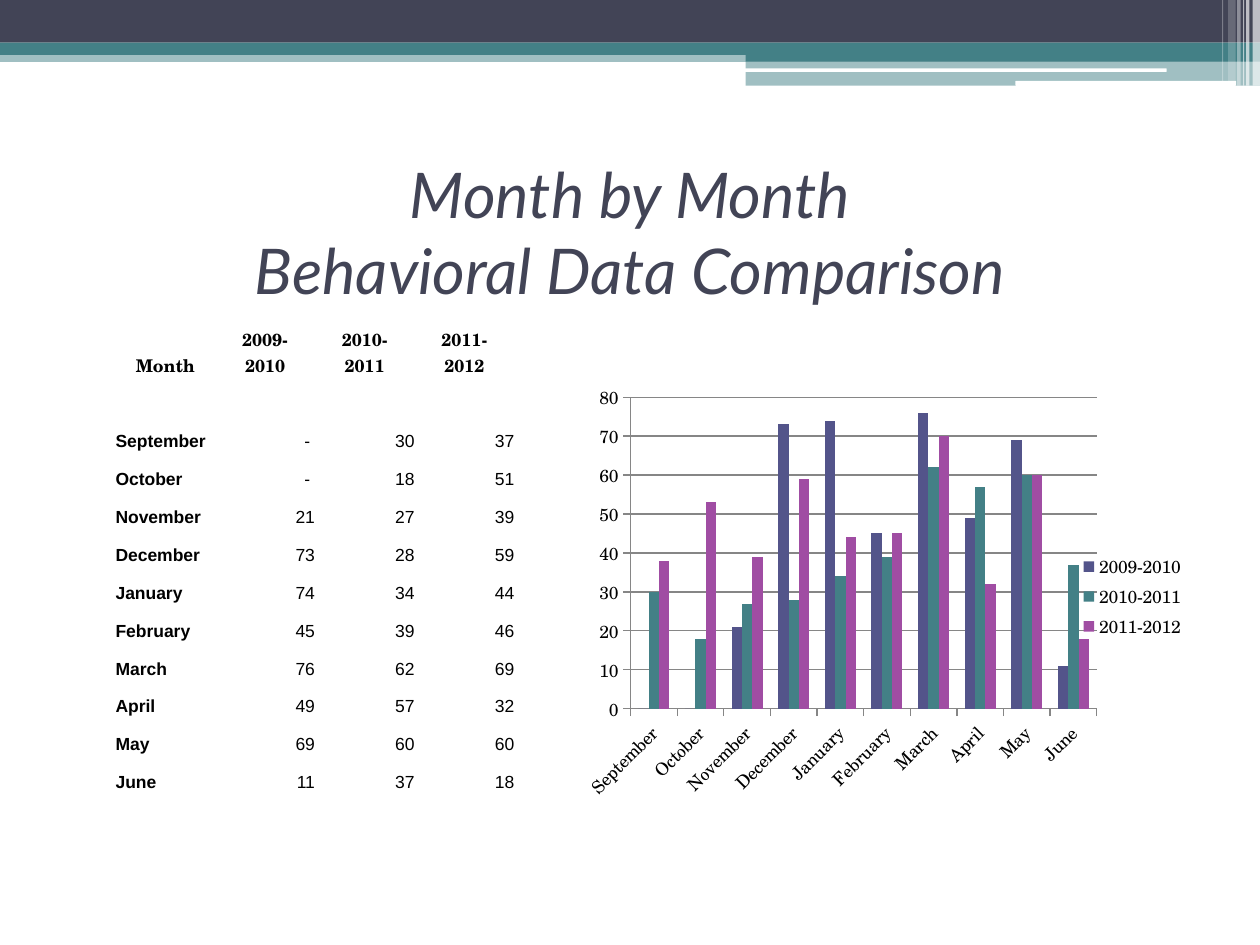
from lxml.etree import SubElement as Sub
from pptx import Presentation
from pptx.chart.data import CategoryChartData as Data
from pptx.dml.color import RGBColor as RGB
from pptx.enum.chart import XL_CHART_TYPE as Kind, XL_LEGEND_POSITION as Side
from pptx.enum.shapes import MSO_SHAPE as Form
from pptx.enum.text import MSO_ANCHOR as Anchor, PP_ALIGN as Align
from pptx.oxml.ns import qn
from pptx.util import Cm, Pt

NAVY = RGB(0x42, 0x44, 0x56)
TEAL = RGB(0x43, 0x80, 0x86)
INDIGO = RGB(0x53, 0x54, 0x8A)
PURPLE = RGB(0xA0, 0x4D, 0xA3)
GRAY = RGB(0x86, 0x86, 0x86)
WHITE = RGB(0xFF, 0xFF, 0xFF)
BLACK = RGB(0, 0, 0)
SERIF, SANS, HEAD = "TeX Gyre Schola", "Arial", "Lato"
PLAIN = "{2D5ABB26-0587-4C30-8999-92F81FD0307C}"  # table style: no grid

MONTHS = ["September", "October", "November", "December", "January",
          "February", "March", "April", "May", "June"]
COUNTS = [("- ", 30, 37), ("- ", 18, 51), (21, 27, 39), (73, 28, 59),
          (74, 34, 44), (45, 39, 46), (76, 62, 69), (49, 57, 32),
          (69, 60, 60), (11, 37, 18)]
SERIES = [
    ("2009-2010", INDIGO, [0, 0, 21, 73, 74, 45, 76, 49, 69, 11]),
    ("2010-2011", TEAL, [30, 18, 27, 28, 34, 39, 62, 57, 60, 37]),
    ("2011-2012", PURPLE, [38, 53, 39, 59, 44, 45, 70, 32, 60, 18]),
]


def write(frame, text, size=10, font=SANS, color=BLACK, bold=False,
          italic=False, align=Align.LEFT):
    frame.text = text
    for par in frame.paragraphs:
        par.alignment = align
        for run in par.runs:
            face = run.font
            face.size, face.name = Pt(size), font
            face.bold, face.italic = bold, italic
            face.color.rgb = color


def add_bar(slide, box, color, alpha=100, form=Form.RECTANGLE):
    """Place a plain bar; alpha is its opacity in percent."""
    bar = slide.shapes.add_shape(form, *map(Cm, box))
    bar.shadow.inherit = False
    bar.fill.solid()
    bar.fill.fore_color.rgb = color
    bar.line.fill.background()
    if alpha < 100:
        tint = bar.fill._xPr.find(".//" + qn("a:srgbClr"))
        Sub(tint, qn("a:alpha"), val=str(alpha * 1000))


def add_banner(slide, left, top, width):
    half = left + 15.03
    side = width - 15.03
    add_bar(slide, (left, top + 1.02, width, 0.23), TEAL, 50)
    add_bar(slide, (left, top, width, 0.86), NAVY)
    add_bar(slide, (left, top + 0.86, width, 0.25), TEAL)
    add_bar(slide, (half, top + 0.99, side, 0.25), TEAL)
    add_bar(slide, (half, top + 1.23, side, 0.5), TEAL, 50)
    for x, y, wide, high in [(15.01, 1.38, 8.51, 0.07),
                             (20.47, 1.63, 4.45, 0.1)]:
        add_bar(slide, (left + x, top + y, wide, high), WHITE,
                form=Form.ROUNDED_RECTANGLE)
    # Stripes: distance from the right edge, width, height, opacity
    for gap, wide, high, alpha in [(0.15, 0.15, 1.73, 65),
                                   (0.28, 0.07, 1.73, 65),
                                   (0.34, 0.02, 1.73, 60),
                                   (0.46, 0.07, 1.73, 40),
                                   (0.64, 0.15, 1.63, 20),
                                   (0.76, 0.02, 1.63, 30)]:
        add_bar(slide, (left + width - gap, top, wide, high), WHITE, alpha)


def add_title(slide, box):
    frame = slide.shapes.add_textbox(*map(Cm, box)).text_frame
    frame.word_wrap = True
    frame.vertical_anchor = Anchor.MIDDLE
    write(frame, "Month by Month\vBehavioral Data Comparison", size=36,
          font=HEAD, color=NAVY, italic=True, align=Align.CENTER)


def add_grid(slide, box):
    """Place the table of counts, which ends with an empty row."""
    heads = ["Month"] + [name.replace("-", "-\n") for name, *_ in SERIES]
    rows = [heads]
    rows += [[month, *nums] for month, nums in zip(MONTHS, COUNTS)]
    rows.append([""] * len(heads))
    tall = [1.09, 1.45]  # two-line heading, then the first month
    rest = len(rows) - len(tall)
    tall += [(box[3] - sum(tall)) / rest] * rest
    table = slide.shapes.add_table(len(rows), len(heads),
                                   *map(Cm, box)).table
    table.first_row = table.horz_banding = False
    table._tbl.tblPr.find(qn("a:tableStyleId")).text = PLAIN
    for col in table.columns:
        col.width = Cm(box[2] / len(heads))
    for r, row in enumerate(rows):
        table.rows[r].height = Cm(tall[r])
        for c, value in enumerate(row):
            cell = table.cell(r, c)
            cell.fill.background()
            cell.vertical_anchor = Anchor.BOTTOM
            cell.margin_left = cell.margin_right = 0
            cell.margin_top = cell.margin_bottom = 0
            if r == 0:
                align = Align.CENTER
            else:
                align = Align.RIGHT if c else Align.LEFT
            write(cell.text_frame, str(value), align=align,
                  font=SANS if r else SERIF, bold=r == 0 or c == 0)


def set_plot(chart, box):
    """Fix the inner plot area, in percent of the chart's size."""
    area = chart._chartSpace.chart.plotArea
    old = area.find(qn("c:layout"))
    if old is not None:
        area.remove(old)
    lay = area.makeelement(qn("c:layout"))
    area.insert(0, lay)
    man = Sub(lay, qn("c:manualLayout"))
    Sub(man, qn("c:layoutTarget"), val="inner")
    for key in "xy":
        Sub(man, qn(f"c:{key}Mode"), val="edge")
    for key, share in zip("xywh", box):
        Sub(man, qn(f"c:{key}"), val=f"{share / 100:.3f}")


def add_graph(slide, box):
    data = Data()
    data.categories = MONTHS
    for name, _, nums in SERIES:
        data.add_series(name, nums)
    chart = slide.shapes.add_chart(Kind.COLUMN_CLUSTERED, *map(Cm, box),
                                   data).chart
    chart.has_title = False
    chart.font.size, chart.font.name = Pt(10), SERIF
    chart.font.color.rgb = BLACK
    chart.has_legend = True
    chart.legend.position = Side.RIGHT
    chart.legend.include_in_layout = False
    plot = chart.plots[0]
    plot.vary_by_categories = False
    plot.gap_width, plot.overlap = 150, 0
    for item, (_, color, _) in zip(plot.series, SERIES):
        item.format.fill.solid()
        item.format.fill.fore_color.rgb = color
    cats, vals = chart.category_axis, chart.value_axis
    vals.minimum_scale, vals.maximum_scale, vals.major_unit = 0, 80, 10
    vals.has_major_gridlines = True
    for part in (cats, vals, vals.major_gridlines):
        part.format.line.color.rgb = GRAY
        part.format.line.width = Pt(0.75)
    cats.tick_labels.font.size = Pt(10)
    turn = cats._element.find(qn("c:txPr")).find(qn("a:bodyPr"))
    turn.set("rot", "-2700000")
    set_plot(chart, (10.1, 4.4, 74, 71.3))


def main():
    deck = Presentation()
    deck.slide_width, deck.slide_height = Cm(25.4), Cm(19.05)
    slide = deck.slides.add_slide(deck.slide_layouts[6])
    add_banner(slide, 0, 0, 25.4)
    add_title(slide, (1.27, 3.18, 22.86, 2.97))
    add_grid(slide, (2.33, 6.56, 8.04, 10.18))
    add_graph(slide, (11.43, 7.62, 12.7, 8.81))
    deck.save("out.pptx")


if __name__ == "__main__":
    main()
